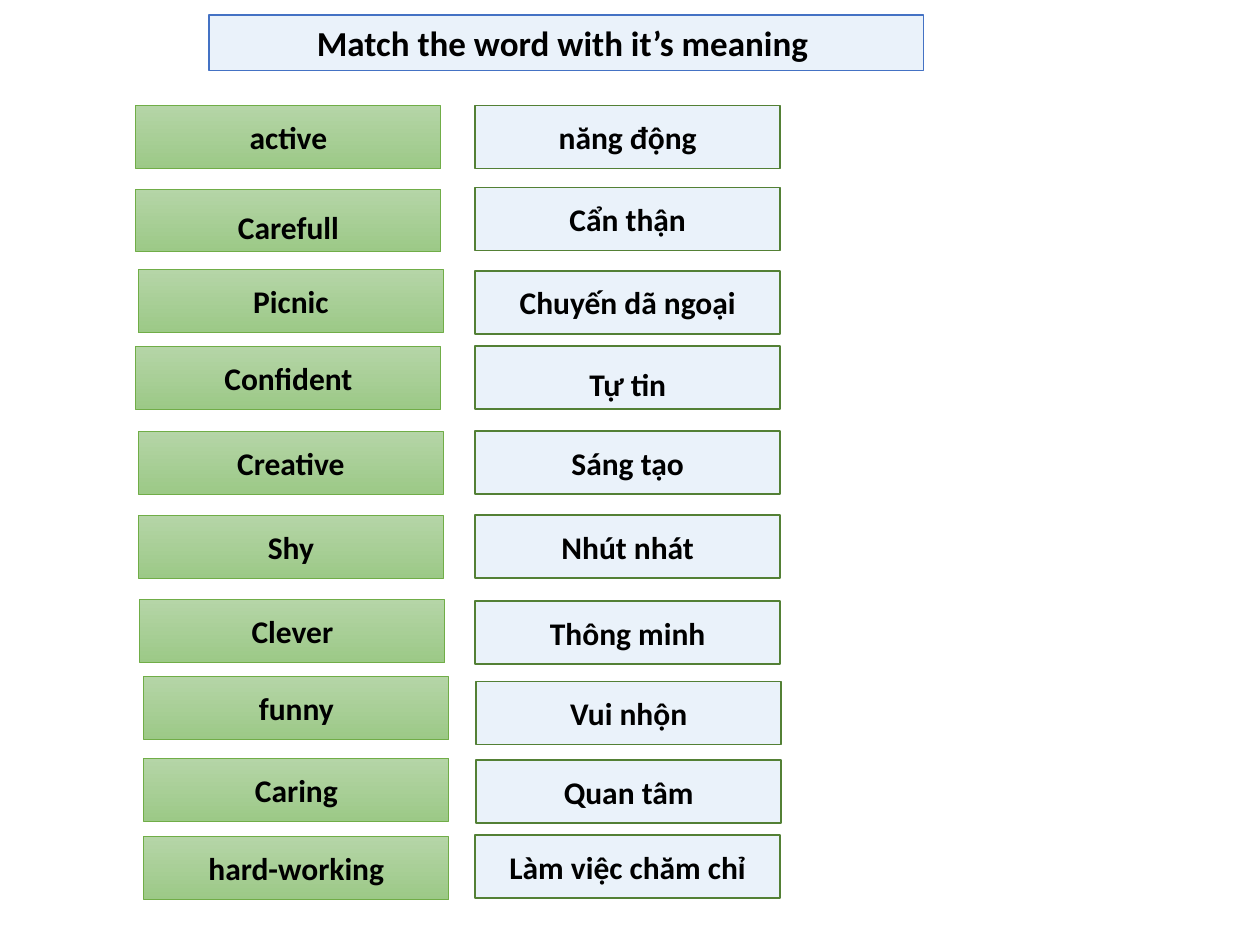
"""Build a slide that sets English words beside their Vietnamese meanings."""
from pptx import Presentation
from pptx.dml.color import RGBColor
from pptx.enum.shapes import MSO_SHAPE
from pptx.enum.text import MSO_ANCHOR, MSO_AUTO_SIZE, PP_ALIGN
from pptx.util import Cm, Pt

HUES = {
    "pale": "EAF2FA",
    "blue": "4472C4",
    "light": "B5D5A7",
    "mid": "9CC987",
    "leaf": "70AD47",
    "dark": "538035",
    "ink": "000000",
}
WIDE, HIGH = Cm(6.15), Cm(1.27)
MID, LOW = MSO_ANCHOR.MIDDLE, MSO_ANCHOR.BOTTOM

WORDS = [
    ("active", 2.74, 2.13, MID),
    ("Carefull", 2.74, 3.81, LOW),
    ("Picnic", 2.79, 5.44, MID),
    ("Confident", 2.74, 6.98, MID),
    ("Creative", 2.79, 8.69, MID),
    ("Shy", 2.79, 10.39, MID),
    ("Clever", 2.82, 12.09, MID),
    ("funny", 2.9, 13.64, MID),
    ("Caring", 2.9, 15.29, MID),
    ("hard-working", 2.9, 16.87, MID),
]
SENSES = [
    ("năng động", 9.58, 2.13, MID),
    ("Cẩn thận", 9.58, 3.78, MID),
    ("Chuyến dã ngoại", 9.58, 5.46, MID),
    ("Tự tin", 9.58, 6.98, LOW),
    ("Sáng tạo", 9.58, 8.69, MID),
    ("Nhút nhát", 9.58, 10.39, MID),
    ("Thông minh", 9.58, 12.12, MID),
    ("Vui nhộn", 9.6, 13.74, MID),
    ("Quan tâm", 9.6, 15.32, MID),
    ("Làm việc chăm chỉ", 9.58, 16.84, MID),
]


def hue(name):
    return RGBColor.from_string(HUES[name])


def dress(box, text, size, edge, width, anchor):
    box.line.color.rgb = hue(edge)
    box.line.width = Pt(width)
    frame = box.text_frame
    frame.word_wrap = True
    frame.auto_size = MSO_AUTO_SIZE.NONE
    frame.vertical_anchor = anchor
    para = frame.paragraphs[0]
    para.alignment = PP_ALIGN.CENTER
    run = para.add_run()
    run.text = text
    run.font.name = "Calibri"
    run.font.size = Pt(size)
    run.font.bold = True
    run.font.color.rgb = hue("ink")


deck = Presentation()
deck.slide_width, deck.slide_height = Cm(25.4), Cm(19.05)
slide = deck.slides.add_slide(deck.slide_layouts[5])

title = slide.shapes.title
title.left, title.top = Cm(4.22), Cm(0.3)
title.width, title.height = Cm(14.4), Cm(1.12)
title.fill.solid()
title.fill.fore_color.rgb = hue("pale")
dress(title, "Match the word with it’s meaning ", 20, "blue", 1, MSO_ANCHOR.TOP)

for group, edge, width in ((WORDS, "leaf", 0.5), (SENSES, "dark", 1)):
    for text, left, top, anchor in group:
        box = slide.shapes.add_shape(MSO_SHAPE.RECTANGLE, Cm(left), Cm(top), WIDE, HIGH)
        box.shadow.inherit = False
        if group is WORDS:
            box.fill.gradient()
            box.fill.gradient_angle = 270
            for stop, name in zip(box.fill.gradient_stops, ("light", "mid")):
                stop.color.rgb = hue(name)
        else:
            box.fill.solid()
            box.fill.fore_color.rgb = hue("pale")
        dress(box, text, 18, edge, width, anchor)

deck.save("out.pptx")
